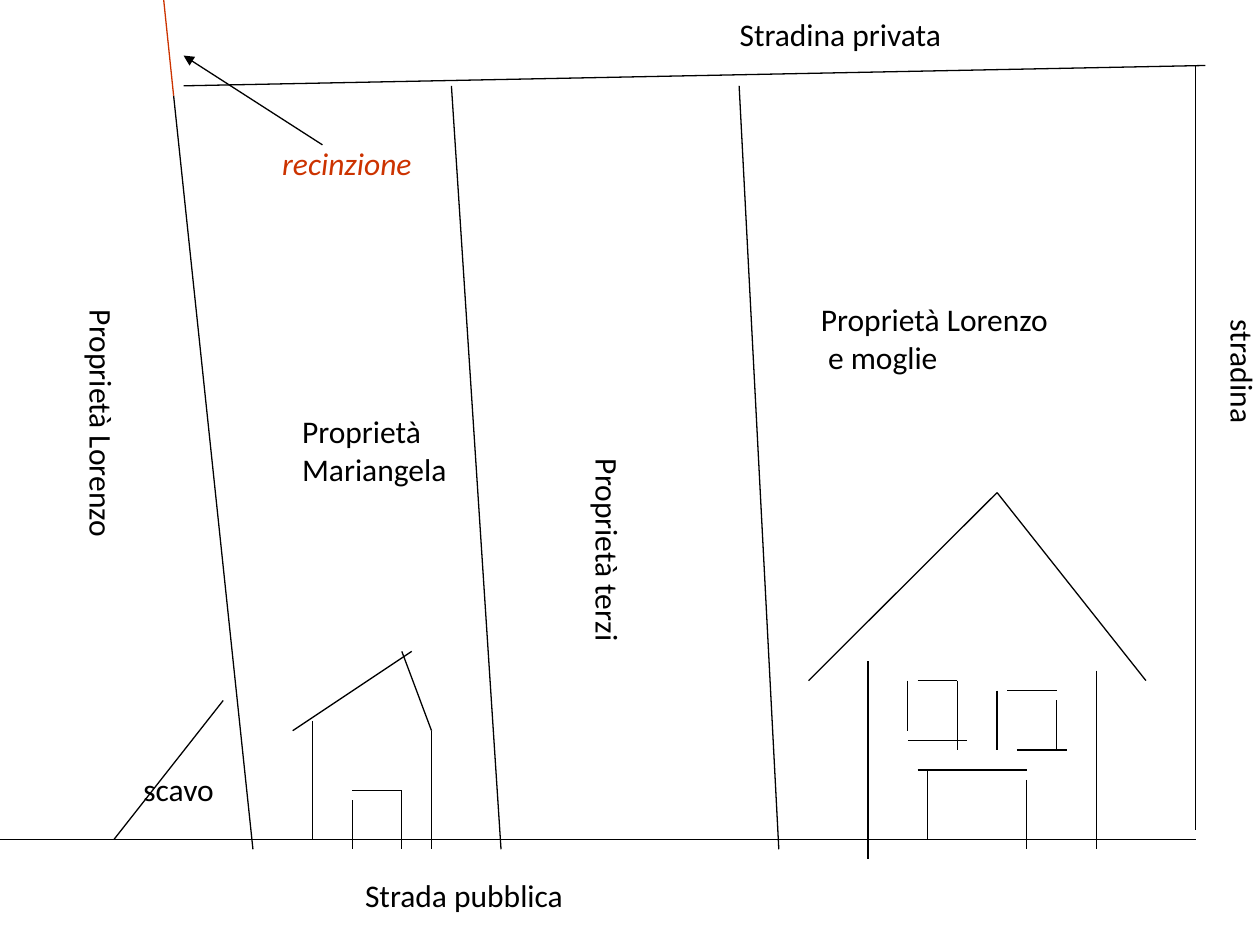
from pptx import Presentation
from pptx import util as u
from pptx.dml import color
from pptx.enum import shapes, text
from pptx.oxml import ns
from lxml import etree

COLORS = {"ink": "000000", "fence": "CC3300"}
FONT = "Calibri"
GROUND = 16.92
BELOW = 17.12

PLOT_LINES = [
    (0, GROUND, 24.1, GROUND),
    (24.1, 16.73, 24.1, 1.32),
    (24.3, 1.32, 3.7, 1.73),
    (3.5, 1.93, 5.1, BELOW),
    (9.1, 1.73, 10.1, BELOW),
    (14.9, 1.73, 15.7, BELOW),
]
EXCAVATION = [(4.5, 14.12, 2.3, GROUND)]
SMALL_HOUSE = [
    (6.3, 14.53, 6.3, GROUND),
    (8.7, 14.73, 8.7, BELOW),
    (5.9, 14.73, 8.3, 13.13),
    (8.7, 14.73, 8.1, 13.13),
    (7.1, 16.13, 7.1, BELOW),
    (7.1, 15.93, 8.1, 15.93),
    (8.1, 15.93, 8.1, BELOW),
]
LARGE_HOUSE = [
    (17.5, 13.33, 17.5, 17.32),
    (22.1, 13.52, 22.1, BELOW),
    (16.3, 13.72, 20.1, 9.93),
    (20.1, 9.93, 23.1, 13.72),
    (18.7, 15.52, 18.7, GROUND),
    (20.7, 15.72, 20.7, BELOW),
    (18.5, 15.52, 20.7, 15.52),
]
WINDOWS = [
    (18.3, 13.72, 18.3, 14.73),
    (18.5, 13.72, 19.3, 13.72),
    (18.3, 14.93, 19.5, 14.93),
    (19.3, 13.72, 19.3, 15.12),
    (20.1, 13.92, 20.1, 15.12),
    (20.3, 13.92, 21.3, 13.92),
    (21.3, 14.12, 21.3, 15.12),
    (20.5, 15.12, 21.5, 15.12),
]
LABELS = [
    ("scavo", 2.64, 15.4, 2.16, 1.02),
    ("Proprietà\nMariangela", 5.84, 8.18, 3.66, 1.78),
    ("Proprietà Lorenzo\n e moglie", 16.3, 5.92, 5.74, 1.78),
    ("Stradina privata", 14.66, 0.18, 4.95, 1.02),
    ("Strada pubblica", 7.11, 17.53, 4.93, 1.02),
]
VERTICAL_LABELS = [
    ("Proprietà Lorenzo", 1.3, 6, 1.27, 5.3),
    ("Proprietà terzi", 11.5, 9, 1.27, 4.22),
    ("stradina", 24.3, 6.2, 1.27, 2.51),
]


def add_line(slide, ends, ink="ink", arrow=False):
    line = slide.shapes.add_connector(
        shapes.MSO_CONNECTOR.STRAIGHT, *(u.Cm(value) for value in ends))
    line.line.color.rgb = color.RGBColor.from_string(COLORS[ink])
    line.line.width = u.Pt(0.75)
    if arrow:
        etree.SubElement(line.line._get_or_add_ln(), ns.qn("a:tailEnd"), type="triangle")
    etree.SubElement(line._element.spPr, ns.qn("a:effectLst"))


def add_label(slide, words, left, top, width, height,
              ink="ink", italic=False, vertical=False):
    box = slide.shapes.add_textbox(u.Cm(left), u.Cm(top), u.Cm(width), u.Cm(height))
    frame = box.text_frame
    frame.word_wrap = False
    frame.auto_size = text.MSO_AUTO_SIZE.SHAPE_TO_FIT_TEXT
    if vertical:
        frame._txBody.bodyPr.set("vert", "eaVert")
    frame.text = words
    for paragraph in frame.paragraphs:
        for run in paragraph.runs:
            run.font.name = FONT
            run.font.size = u.Pt(18)
            run.font.italic = italic
            run.font.color.rgb = color.RGBColor.from_string(COLORS[ink])


def main():
    presentation = Presentation()
    presentation.slide_width = u.Cm(25.4)
    presentation.slide_height = u.Cm(19.05)
    slide = presentation.slides.add_slide(presentation.slide_layouts[6])

    for ends in PLOT_LINES + EXCAVATION + SMALL_HOUSE + LARGE_HOUSE + WINDOWS:
        add_line(slide, ends)
    for label in LABELS:
        add_label(slide, *label)
    for label in VERTICAL_LABELS:
        add_label(slide, *label, vertical=True)

    add_line(slide, (3.3, 0, 3.5, 1.93), ink="fence")
    add_line(slide, (6.5, 2.92, 3.7, 1.12), arrow=True)
    add_label(slide, "recinzione", 5.44, 2.77, 3.4, 1.02, ink="fence", italic=True)

    presentation.save("out.pptx")


if __name__ == "__main__":
    main()
